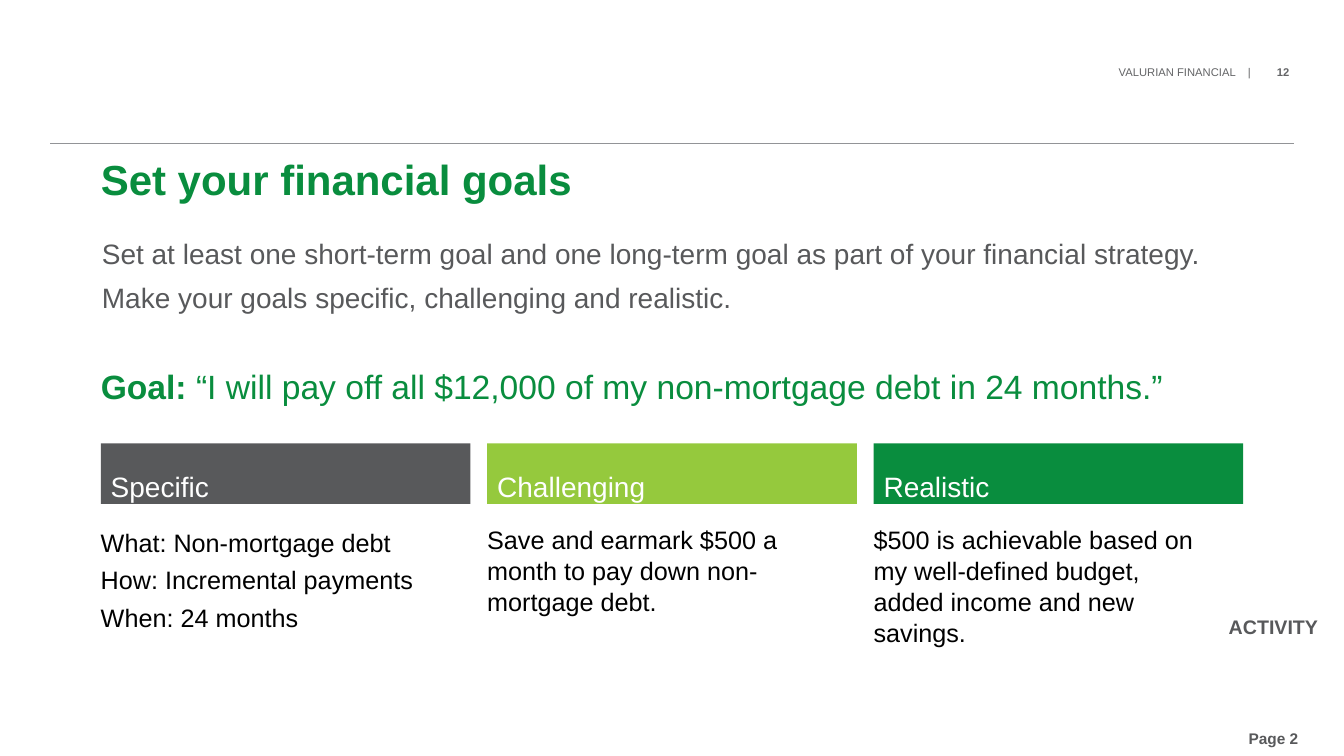
from pptx import Presentation
from pptx.dml.color import RGBColor
from pptx.enum.shapes import MSO_CONNECTOR, MSO_SHAPE
from pptx.enum.text import MSO_ANCHOR, PP_ALIGN
from pptx.oxml.ns import qn
from pptx.util import Inches, Pt
from lxml import etree

GREEN = RGBColor(0x09, 0x8D, 0x3E)
LIME = RGBColor(0x95, 0xC9, 0x3D)
GRAY = RGBColor(0x58, 0x59, 0x5B)
HEADER_GRAY = RGBColor(0x63, 0x64, 0x66)
RULE_GRAY = RGBColor(0x92, 0x94, 0x97)
WHITE = RGBColor(0xFF, 0xFF, 0xFF)
BLACK = RGBColor(0, 0, 0)
LEFT, CENTER, RIGHT = PP_ALIGN.LEFT, PP_ALIGN.CENTER, PP_ALIGN.RIGHT
TOP = MSO_ANCHOR.TOP
RECTANGLE = MSO_SHAPE.RECTANGLE
STRAIGHT = MSO_CONNECTOR.STRAIGHT
LINE_BREAK = "\v"
COLUMNS, ROWS = 80, 75


class GoalSlide:
    font_name = "Arial"

    def __init__(self, deck):
        self.slide = deck.slides.add_slide(deck.slide_layouts[6])
        self.column = deck.slide_width / COLUMNS
        self.row = deck.slide_height / ROWS

    def place(self, left, top, width, height):
        return (round(left * self.column), round(top * self.row),
                round(width * self.column), round(height * self.row))

    def rule(self, left, top, width):
        x, y, length, _ = self.place(left, top, width, 0)
        line = self.slide.shapes.add_connector(STRAIGHT, x, y, x + length, y)
        line.line.color.rgb = RULE_GRAY
        line.line.width = Pt(0.5)
        etree.SubElement(line._element.spPr, qn("a:effectLst"))

    def bar(self, box, color):
        bar = self.slide.shapes.add_shape(RECTANGLE, *self.place(*box))
        bar.shadow.inherit = False
        bar.fill.solid()
        bar.fill.fore_color.rgb = color
        bar.line.fill.background()

    def text(self, box, paragraphs, size, color, bold=False, align=LEFT,
             inset=(0, 0), tab=None, gap=0, **spacing):
        frame = self.slide.shapes.add_textbox(*self.place(*box)).text_frame
        side, edge = (Inches(value) for value in inset)
        frame_format = {
            "word_wrap": True, "vertical_anchor": TOP,
            "margin_left": side, "margin_right": side,
            "margin_top": edge, "margin_bottom": edge,
        }
        for name, value in frame_format.items():
            setattr(frame, name, value)
        for index, runs in enumerate(paragraphs):
            paragraph = frame.add_paragraph() if index else frame.paragraphs[0]
            paragraph_format = {"alignment": align, **spacing}
            if index and gap:
                paragraph_format["space_before"] = Pt(gap)
            for name, value in paragraph_format.items():
                setattr(paragraph, name, value)
            if tab:
                tabs = etree.SubElement(paragraph._p.get_or_add_pPr(), qn("a:tabLst"))
                etree.SubElement(tabs, qn("a:tab"), pos=str(Inches(tab)), algn="l")
            for words, strong in [(runs, bold)] if isinstance(runs, str) else runs:
                self.add_words(paragraph, words, size, color, strong)

    def add_words(self, paragraph, words, size, color, bold):
        for index, part in enumerate(words.split(LINE_BREAK)):
            if index:
                paragraph.add_line_break()
            run = paragraph.add_run()
            run.text = part
            run.font.color.rgb = color
            font_format = {"name": self.font_name, "size": Pt(size), "bold": bold}
            for name, value in font_format.items():
                setattr(run.font, name, value)


def main():
    deck = Presentation()
    deck.slide_width, deck.slide_height = Inches(13.33), Inches(7.5)
    page = GoalSlide(deck)

    page.text((63.2, 6.5, 13.55, 1.5),
              [[("VALURIAN FINANCIAL    |\t", False), ("12", True)]],
              8, HEADER_GRAY, align=RIGHT, tab=1.57)
    page.rule(3, 14.2, 74)
    page.text((6, 15.8, 68, 10.5), ["Set your financial goals"],
              30, GREEN, bold=True, line_spacing=0.9)
    page.text((6.06, 23.8, 68, 9.3), [
        "Set at least one short-term goal and one long-term goal as part of your financial strategy.",
        "Make your goals specific, challenging and realistic.",
    ], 20, GRAY, gap=10, line_spacing=0.9)
    page.text((6, 36.8, 68, 5.3), [[
        ("Goal: ", True),
        ("“I will pay off all $12,000 of my non-mortgage debt in 24 months.”", False),
    ]], 24, GREEN, line_spacing=0.9)

    qualities = [
        ("Specific", GRAY, 52.3, [
            "What: Non-mortgage debt", "How: Incremental payments", "When: 24 months"]),
        ("Challenging", LIME, 52, [
            "Save and earmark $500 a month to pay down non-mortgage debt."]),
        ("Realistic", GREEN, 52, [
            "$500 is achievable based on my well-defined budget, "
            + LINE_BREAK + "added income and new savings."]),
    ]
    for index, (quality, color, top, details) in enumerate(qualities):
        left = 6 + 23 * index
        page.bar((left, 44, 22, 6), color)
        page.text((left, 46.1, 14, 4.4), [quality], 20, WHITE, inset=(0.1, 0.05))
        page.text((left, top, 21, 12), details, 18, BLACK,
                  line_spacing=Pt(22), space_after=Pt(4.5))

    page.text((72.9, 72.3, 5.8, 1.9), ["Page 2"], 11, GRAY, bold=True, align=CENTER)
    page.text((72.3, 60.5, 7, 3.4), ["ACTIVITY"], 14, GRAY, bold=True,
              align=CENTER, inset=(0.1, 0.05))
    deck.save("out.pptx")


if __name__ == "__main__":
    main()
